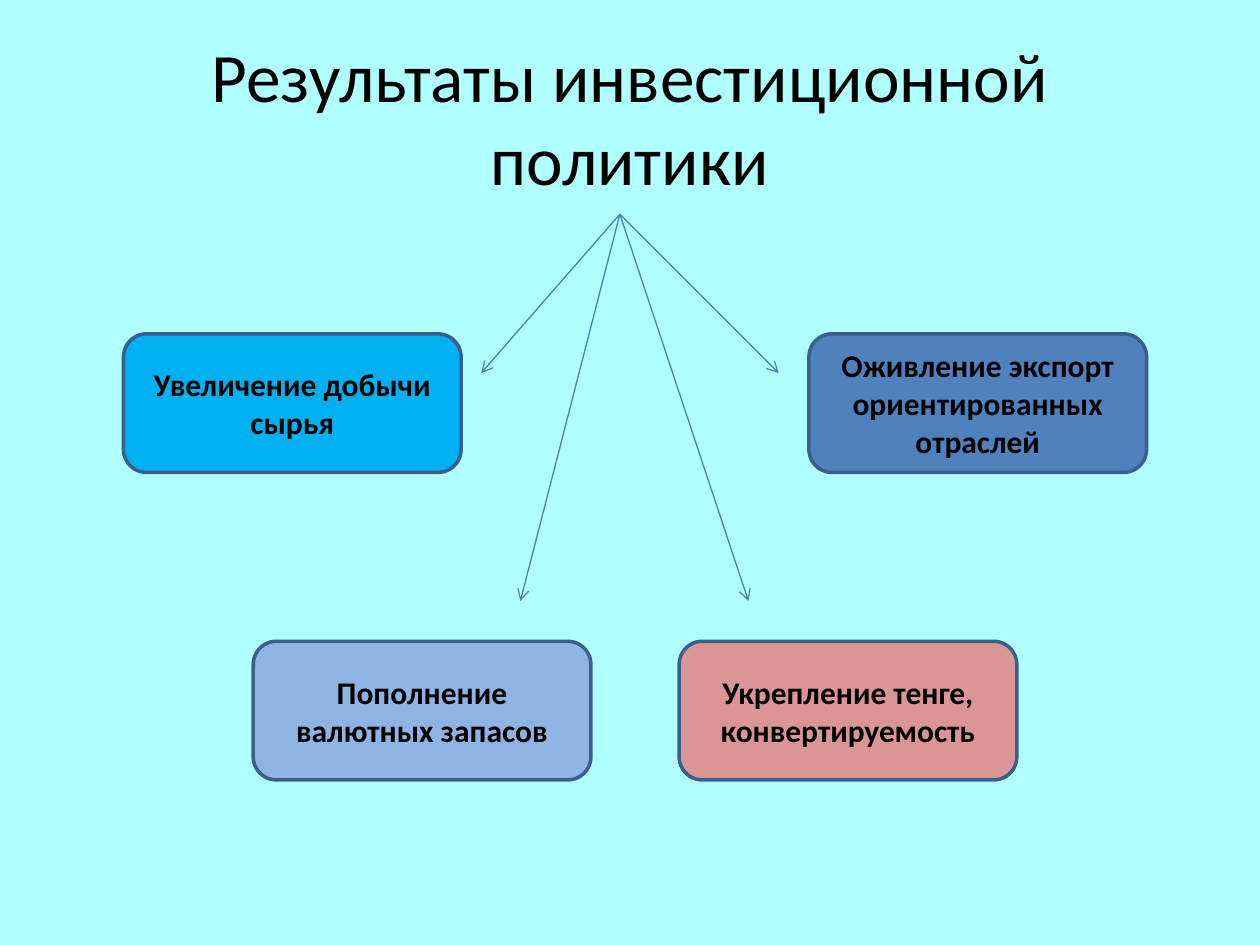
from dataclasses import dataclass

from lxml import etree
from pptx import Presentation
from pptx.dml.color import RGBColor
from pptx.enum.shapes import MSO_CONNECTOR, MSO_SHAPE
from pptx.enum.text import MSO_ANCHOR, PP_ALIGN
from pptx.oxml.ns import qn
from pptx.slide import Slide
from pptx.text.text import TextFrame
from pptx.util import Inches, Pt

ROUNDED = MSO_SHAPE.ROUNDED_RECTANGLE
STRAIGHT = MSO_CONNECTOR.STRAIGHT
MIDDLE = MSO_ANCHOR.MIDDLE
CENTER = PP_ALIGN.CENTER

COLORS = {
    "background": "AFFFFF",
    "text": "000000",
    "border": "3A5F8C",
    "arrow": "4B7EBC",
    "raw_materials": "00B0F0",
    "export": "4F81BD",
    "reserves": "8EB4E3",
    "tenge": "D99694",
}
TITLE_FORMAT = {"name": "Calibri", "size": Pt(39.6), "bold": False}
RESULT_FORMAT = {"name": "Calibri", "size": Pt(18), "bold": True}
RESULT_WIDTH, RESULT_HEIGHT = 2.68, 1.1
UPPER_ROW, LOWER_ROW = 2.65, 5.09
ARROW_ORIGIN = (4.92, 1.7)
UPPER_TIP, LOWER_TIP = 2.96, 4.77


@dataclass(frozen=True)
class Result:
    text: str
    left: float
    top: float
    color: str
    tip_x: float
    tip_y: float


RESULTS = (
    Result("Увеличение добычи сырья", 0.98, UPPER_ROW, "raw_materials", 3.82, UPPER_TIP),
    Result("Оживление экспорт ориентированных отраслей", 6.42, UPPER_ROW, "export", 6.18, UPPER_TIP),
    Result("Пополнение валютных запасов", 2.01, LOWER_ROW, "reserves", 4.13, LOWER_TIP),
    Result("Укрепление тенге, конвертируемость", 5.39, LOWER_ROW, "tenge", 5.94, LOWER_TIP),
)


def rgb(name: str) -> RGBColor:
    return RGBColor.from_string(COLORS[name])


def write_text(frame: TextFrame, text: str, text_format: dict) -> None:
    frame.word_wrap = True
    frame.vertical_anchor = MIDDLE
    paragraph = frame.paragraphs[0]
    paragraph.alignment = CENTER
    run = paragraph.add_run()
    run.text = text
    for attribute, value in text_format.items():
        setattr(run.font, attribute, value)
    run.font.color.rgb = rgb("text")


def draw_title(slide: Slide, text: str) -> None:
    title = slide.shapes.add_textbox(Inches(0.5), Inches(0.3), Inches(9), Inches(1.25))
    write_text(title.text_frame, text, TITLE_FORMAT)


def draw_result(slide: Slide, result: Result) -> None:
    box = slide.shapes.add_shape(
        ROUNDED, Inches(result.left), Inches(result.top),
        Inches(RESULT_WIDTH), Inches(RESULT_HEIGHT),
    )
    box.shadow.inherit = False
    box.fill.solid()
    box.fill.fore_color.rgb = rgb(result.color)
    box.line.color.rgb = rgb("border")
    box.line.width = Pt(2)
    write_text(box.text_frame, result.text, RESULT_FORMAT)


def draw_arrow(slide: Slide, result: Result) -> None:
    arrow = slide.shapes.add_connector(
        STRAIGHT, *map(Inches, (*ARROW_ORIGIN, result.tip_x, result.tip_y))
    )
    arrow.line.color.rgb = rgb("arrow")
    arrow.line.width = Pt(0.75)
    properties = arrow.line._get_or_add_ln()
    etree.SubElement(properties, qn("a:tailEnd"), type="arrow")
    etree.SubElement(properties.getparent(), qn("a:effectLst"))


def main() -> None:
    presentation = Presentation()
    presentation.slide_width = Inches(10)
    presentation.slide_height = Inches(7.5)
    slide = presentation.slides.add_slide(presentation.slide_layouts[6])
    slide.background.fill.solid()
    slide.background.fill.fore_color.rgb = rgb("background")
    draw_title(slide, "Результаты инвестиционной политики")
    for result in RESULTS:
        draw_result(slide, result)
    for result in RESULTS:
        draw_arrow(slide, result)
    presentation.save("out.pptx")


if __name__ == "__main__":
    main()
